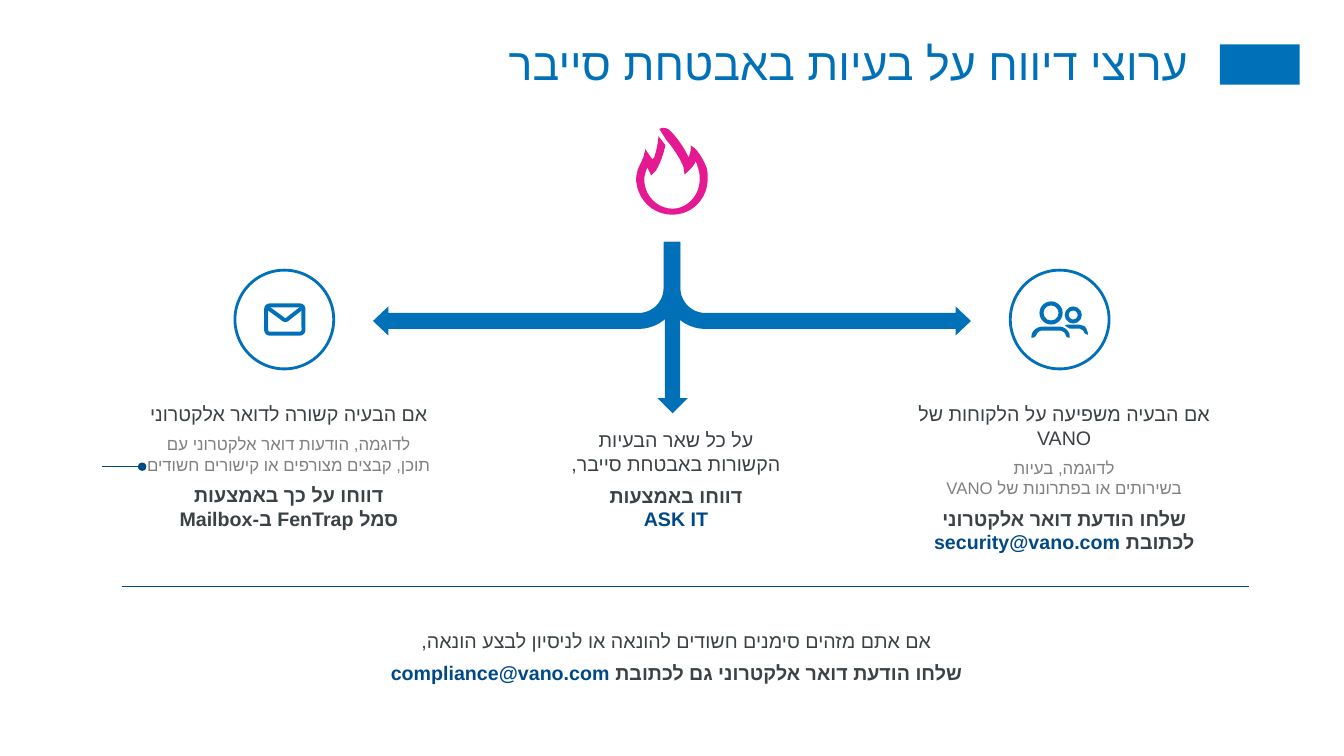
from dataclasses import dataclass

from lxml import etree
from pptx import Presentation
from pptx import util as u
from pptx.dml import color
from pptx.enum import shapes, text
from pptx.oxml import ns

BLUE, NAVY, PINK = "0071B9", "004987", "E51A92"
DARK, GRAY = "3B4245", "808080"
FONT = "Arial"
Point = tuple[float, ...]


@dataclass
class Run:
    content: str
    size: int = 14
    color: str = DARK
    bold: bool = False


@dataclass
class TextBlock:
    box: Point
    paragraphs: list[list[Run]]


@dataclass
class Arrow:
    kind: shapes.MSO_SHAPE
    box: Point
    flips: tuple[str, ...] = ()
    rotation: float = 0
    adjustments: tuple[float, ...] = ()


@dataclass
class Rule:
    start: Point
    end: Point
    dot: bool = False


BEND = (0.17, 0.156, 0.164, 0.438)
ARROWS = [
    Arrow(shapes.MSO_SHAPE.RIGHT_ARROW, (5.82, 3.1, 1.7, 0.3), rotation=90),
    Arrow(shapes.MSO_SHAPE.BENT_ARROW, (3.7, 2.4, 3.04, 0.93), ("flipH", "flipV"), adjustments=BEND),
    Arrow(shapes.MSO_SHAPE.BENT_ARROW, (6.59, 2.4, 3.04, 0.93), ("flipV",), adjustments=BEND),
]
RULES = [Rule((1.01, 4.63), (1.41, 4.63), dot=True), Rule((1.21, 5.82), (12.39, 5.82))]
BLOCKS = [
    TextBlock((1.21, 3.99, 3.23, 1.28), [
        [Run("אם הבעיה קשורה לדואר אלקטרוני")],
        [Run("לדוגמה, הודעות דואר אלקטרוני עם\nתוכן, קבצים מצורפים או קישורים חשודים", 12, GRAY)],
        [Run("דווחו על כך באמצעות\nסמל FenTrap ב-Mailbox", bold=True)],
    ]),
    TextBlock((8.9, 3.99, 3.23, 1.28), [
        [Run("אם הבעיה משפיעה על הלקוחות של VANO")],
        [Run("לדוגמה, בעיות\nבשירותים או בפתרונות של VANO", 12, GRAY)],
        [Run("שלחו הודעת דואר אלקטרוני לכתובת ", bold=True), Run("security@vano.com", color=NAVY, bold=True)],
    ]),
    TextBlock((5.53, 4.25, 2.27, 1.03), [
        [Run("על כל שאר הבעיות הקשורות באבטחת סייבר,")],
        [Run("דווחו באמצעות\n", bold=True), Run("ASK IT", color=NAVY, bold=True)],
    ]),
    TextBlock((3.42, 6.24, 6.5, 0.56), [
        [Run("אם אתם מזהים סימנים חשודים להונאה או לניסיון לבצע הונאה,")],
        [Run("שלחו הודעת דואר אלקטרוני גם לכתובת ", bold=True), Run("compliance@vano.com", color=NAVY, bold=True)],
    ]),
]
FLAME = [
    (7.02, 1.79), (7.02, 1.75, 7.02, 1.7, 7.01, 1.67), (6.98, 1.58, 6.92, 1.5, 6.9, 1.48),
    (6.88, 1.46, 6.86, 1.45, 6.85, 1.44), (6.86, 1.5, 6.83, 1.56, 6.83, 1.56),
    (6.76, 1.41, 6.66, 1.31, 6.66, 1.31), (6.64, 1.29), (6.62, 1.27, 6.57, 1.26, 6.54, 1.28),
    (6.61, 1.39), (6.69, 1.48, 6.76, 1.6, 6.78, 1.66), (6.79, 1.73),
    (6.79, 1.73, 6.88, 1.66, 6.9, 1.6), (6.91, 1.62, 6.92, 1.65, 6.93, 1.69),
    (6.94, 1.71, 6.94, 1.76, 6.94, 1.8), (6.93, 1.95, 6.81, 2.07, 6.67, 2.07),
    (6.52, 2.07, 6.39, 1.94, 6.39, 1.78), (6.39, 1.77, 6.39, 1.75, 6.4, 1.73),
    (6.4, 1.71, 6.41, 1.69, 6.42, 1.66), (6.46, 1.74), (6.5, 1.7),
    (6.54, 1.64, 6.58, 1.54, 6.6, 1.44), (6.53, 1.35), (6.53, 1.41, 6.51, 1.49, 6.49, 1.56),
    (6.47, 1.58), (6.4, 1.48), (6.4, 1.49, 6.4, 1.5, 6.39, 1.52),
    (6.39, 1.55, 6.37, 1.58, 6.36, 1.61), (6.34, 1.65, 6.32, 1.68, 6.32, 1.72),
    (6.31, 1.74, 6.31, 1.76, 6.31, 1.8), (6.33, 1.99, 6.48, 2.13, 6.67, 2.13),
    (6.86, 2.13, 7.01, 1.98, 7.02, 1.79),
]
FRONT_SHOULDERS = [
    (10.52, 3.24), (10.33, 3.24), (10.27, 3.25, 10.23, 3.29, 10.23, 3.34), (10.23, 3.35), (10.24, 3.35),
    (10.26, 3.35, 10.27, 3.34, 10.28, 3.32), (10.29, 3.3, 10.31, 3.28, 10.33, 3.28), (10.51, 3.28),
    (10.54, 3.28, 10.56, 3.3, 10.57, 3.32), (10.57, 3.34, 10.59, 3.35, 10.6, 3.35), (10.61, 3.35),
    (10.61, 3.34), (10.61, 3.29, 10.57, 3.25, 10.52, 3.24),
]
BACK_SHOULDERS = [
    (10.78, 3.28), (10.78, 3.26, 10.77, 3.25, 10.76, 3.24), (10.75, 3.23, 10.73, 3.23, 10.7, 3.22),
    (10.59, 3.22), (10.58, 3.22, 10.57, 3.23, 10.56, 3.23), (10.58, 3.24, 10.59, 3.25, 10.61, 3.26),
    (10.71, 3.26), (10.72, 3.27, 10.74, 3.27, 10.75, 3.29), (10.75, 3.3, 10.77, 3.32, 10.79, 3.32),
    (10.79, 3.3, 10.79, 3.29, 10.78, 3.28),
]


def inches(values: Point) -> list[u.Length]:
    return [u.Inches(value) for value in values]


def rgb(value: str) -> color.RGBColor:
    return color.RGBColor.from_string(value)


def paint(shape, fill: str | None = None, line: str | None = None, width: float = 1) -> None:
    shape.shadow.inherit = False
    if fill:
        shape.fill.solid()
        shape.fill.fore_color.rgb = rgb(fill)
    else:
        shape.fill.background()
    if line:
        shape.line.color.rgb = rgb(line)
        shape.line.width = u.Pt(width)
    else:
        shape.line.fill.background()


def add_preset(slide, kind: shapes.MSO_SHAPE, box: Point, adjustments: Point = (), **style):
    shape = slide.shapes.add_shape(kind, *inches(box))
    for index, value in enumerate(adjustments):
        shape.adjustments[index] = value
    paint(shape, **style)
    return shape


def flatten(steps: list[Point], count: int = 10) -> list[Point]:
    points = [steps[0]]
    for step in steps[1:]:
        if len(step) == 2:
            points.append(step)
            continue
        corners = [points[-1], step[:2], step[2:4], step[4:]]
        for index in range(1, count + 1):
            t = index / count
            weights = ((1 - t) ** 3, 3 * t * (1 - t) ** 2, 3 * t * t * (1 - t), t ** 3)
            points.append(tuple(sum(w * c[axis] for w, c in zip(weights, corners)) for axis in (0, 1)))
    return points


def add_outline(slide, steps: list[Point], close: bool = True, **style) -> None:
    first, *rest = [inches(point) for point in flatten(steps)]
    builder = slide.shapes.build_freeform(*first)
    builder.add_line_segments(rest, close=close)
    paint(builder.convert_to_shape(), **style)


def add_arrow(slide, arrow: Arrow) -> None:
    shape = add_preset(slide, arrow.kind, arrow.box, arrow.adjustments, fill=BLUE)
    shape.rotation = arrow.rotation
    for flip in arrow.flips:
        shape._element.spPr.get_or_add_xfrm().set(flip, "1")


def add_rule(slide, rule: Rule) -> None:
    connector = slide.shapes.add_connector(shapes.MSO_CONNECTOR.STRAIGHT, *inches(rule.start + rule.end))
    connector.line.color.rgb = rgb(NAVY)
    connector.line.width = u.Pt(0.5)
    if rule.dot:
        etree.SubElement(connector.line._get_or_add_ln(), ns.qn("a:tailEnd"), type="oval")
    etree.SubElement(connector._element.spPr, ns.qn("a:effectLst"))


def add_run(paragraph, content: str, *, size: int = 14, color: str = DARK, bold: bool = False) -> None:
    for index, line in enumerate(content.split("\n")):
        if index:
            paragraph.add_line_break()
        if line:
            run = paragraph.add_run()
            run.text = line
            run.font.size, run.font.bold, run.font.name = u.Pt(size), bold, FONT
            run.font.color.rgb = rgb(color)
            etree.SubElement(run.font._element, ns.qn("a:cs"), typeface=FONT)


def format_frame(frame, left: float = 0) -> None:
    frame.word_wrap = True
    frame.vertical_anchor = text.MSO_ANCHOR.TOP
    frame.margin_left = u.Inches(left)
    frame.margin_top = frame.margin_right = frame.margin_bottom = 0


def format_paragraph(paragraph, alignment: text.PP_ALIGN) -> None:
    paragraph.alignment = alignment
    paragraph._p.get_or_add_pPr().set("rtl", "1")


def add_title(slide, content: str) -> None:
    title = slide.shapes.title
    title.left, title.top, title.width, title.height = inches((0.45, 0.44, 11.34, 0.94))
    format_frame(title.text_frame)
    title.text_frame.auto_size = text.MSO_AUTO_SIZE.NONE
    paragraph = title.text_frame.paragraphs[0]
    format_paragraph(paragraph, text.PP_ALIGN.RIGHT)
    paragraph.line_spacing = 0.85
    add_run(paragraph, content, size=32, color=BLUE)


def add_block(slide, block: TextBlock) -> None:
    frame = slide.shapes.add_textbox(*inches(block.box)).text_frame
    format_frame(frame, left=0.08)
    frame.auto_size = text.MSO_AUTO_SIZE.SHAPE_TO_FIT_TEXT
    for index, runs in enumerate(block.paragraphs):
        paragraph = frame.add_paragraph() if index else frame.paragraphs[0]
        format_paragraph(paragraph, text.PP_ALIGN.CENTER)
        paragraph.space_after = u.Pt(6)
        for run in runs:
            add_run(paragraph, run.content, size=run.size, color=run.color, bold=run.bold)


def add_icons(slide) -> None:
    add_outline(slide, FLAME, fill=PINK)
    for left in (2.33, 10.02):
        add_preset(slide, shapes.MSO_SHAPE.OVAL, (left, 2.68, 0.98, 0.98), line=BLUE, width=2)
    add_preset(slide, shapes.MSO_SHAPE.ROUNDED_RECTANGLE, (2.64, 3.03, 0.37, 0.28), (0.12,), line=BLUE, width=2.8)
    flap = [(2.65, 3.05), (2.8, 3.16), (2.82, 3.18, 2.84, 3.18, 2.86, 3.16), (3.0, 3.05)]
    add_outline(slide, flap, close=False, line=BLUE, width=2.8)
    for left, top, size in ((10.56, 3.04, 0.17), (10.31, 2.99, 0.23)):
        add_preset(slide, shapes.MSO_SHAPE.DONUT, (left, top, size, size), (0.04 / size,), fill=BLUE)
    for shoulders in (BACK_SHOULDERS, FRONT_SHOULDERS):
        add_outline(slide, shoulders, fill=BLUE)


def main() -> None:
    presentation = Presentation()
    presentation.slide_width, presentation.slide_height = inches((13.33, 7.5))
    slide = presentation.slides.add_slide(presentation.slide_layouts[5])
    add_preset(slide, shapes.MSO_SHAPE.RECTANGLE, (12.1, 0.44, 0.79, 0.4), fill=BLUE)
    add_title(slide, "ערוצי דיווח על בעיות באבטחת סייבר")
    add_icons(slide)
    for arrow in ARROWS:
        add_arrow(slide, arrow)
    for block in BLOCKS:
        add_block(slide, block)
    for rule in RULES:
        add_rule(slide, rule)
    presentation.save("out.pptx")


if __name__ == "__main__":
    main()
